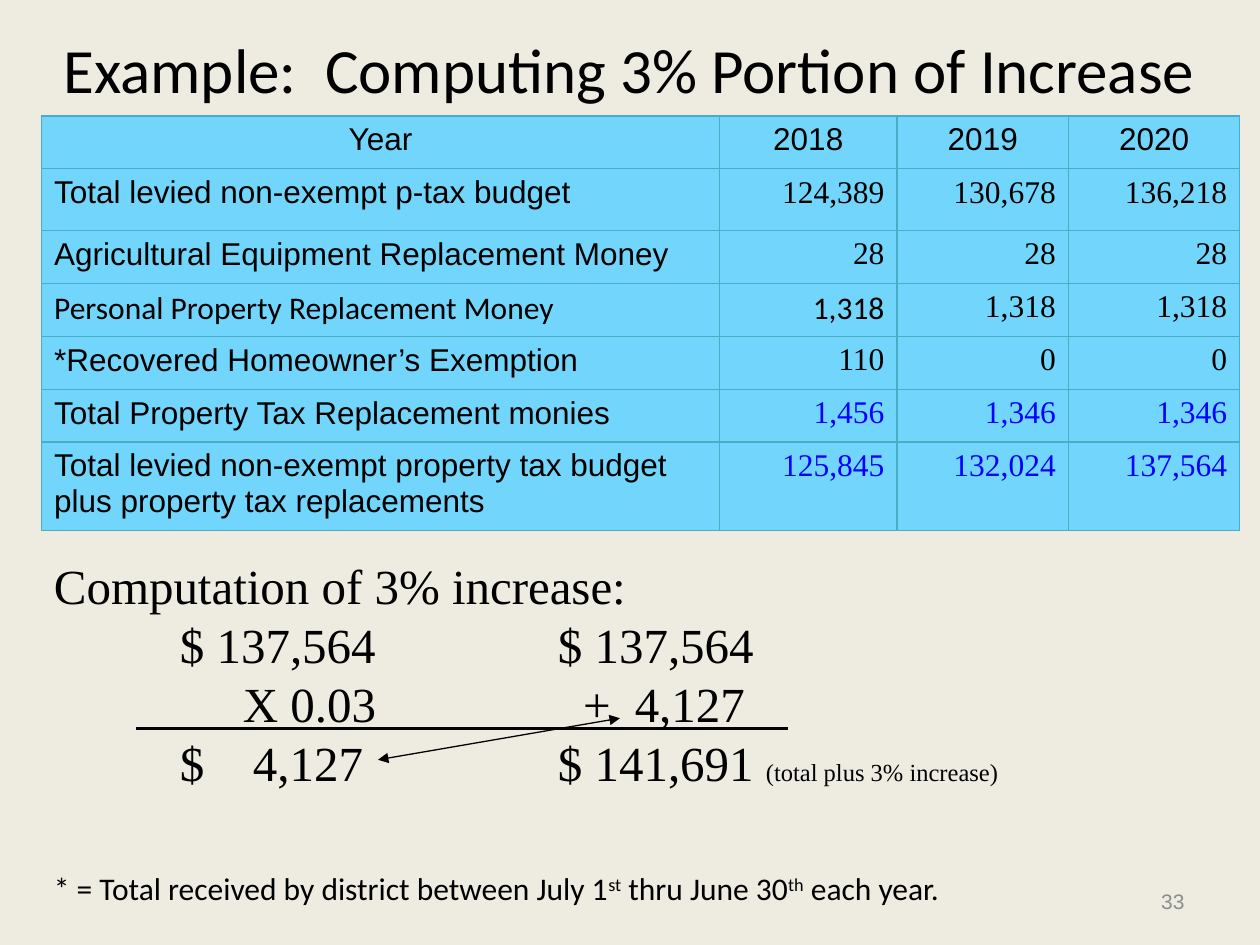
from lxml import etree
from pptx import Presentation
from pptx.dml.color import RGBColor
from pptx.enum import shapes, text
from pptx.oxml import ns
from pptx.util import Inches, Pt

COLORS = {"page": "EEECE1", "cell": "72D6FC", "border": "4BACC6",
          "ink": "000000", "total": "0000FF", "number": "8C8C8C"}
SANS, SERIF, BODY = "Arial", "Times New Roman", "Calibri"
LEFT, CENTER, RIGHT = text.PP_ALIGN.LEFT, text.PP_ALIGN.CENTER, text.PP_ALIGN.RIGHT
MARGIN = 0.33
COLUMNS = [5.38, 1.41, 1.36, 1.36]
ROWS = [0.42, 0.49, 0.42, 0.42, 0.42, 0.42, 0.7]
BUDGET = [
    ("Year", "2018", "2019", "2020"),
    ("Total levied non-exempt p-tax budget", "124,389", "130,678", "136,218"),
    ("Agricultural Equipment Replacement Money", "28", "28", "28"),
    ("Personal Property Replacement Money", "1,318", "1,318", "1,318"),
    ("*Recovered Homeowner’s Exemption", "110", "0", "0"),
    ("Total Property Tax Replacement monies", "1,456", "1,346", "1,346"),
    ("Total levied non-exempt property tax budget plus property tax replacements",
     "125,845", "132,024", "137,564"),
]
PERSONAL_ROW, FIRST_TOTAL_ROW = 3, 5
COMPUTATION = [
    ("Computation of 3% increase:", []),
    ("\t$ 137,564\t$ 137,564", [1, 4]),
    ("\tX 0.03\t+\t4,127", [1.5, 4.2, 4.61]),
    ("\t$\t4,127\t$ 141,691 ", [1, 1.58, 4]),
]


def color(name):
    return RGBColor.from_string(COLORS[name])


def add_element(parent, tag, **attributes):
    return etree.SubElement(parent, ns.qn(tag), attributes)


def add_span(para, words, size, font, ink="ink", baseline=None):
    span = para.add_run()
    span.text = words
    span.font.size = Pt(size)
    span.font.name = font
    span.font.color.rgb = color(ink)
    if baseline:
        span.font._element.set("baseline", str(baseline))


def add_box(page, left, top, width, height, anchor=text.MSO_ANCHOR.TOP):
    box = page.shapes.add_textbox(*map(Inches, (left, top, width, height)))
    frame = box.text_frame
    frame.word_wrap = True
    frame.vertical_anchor = anchor
    return frame


def add_line(page, start, end, width, arrows=False):
    line = page.shapes.add_connector(
        shapes.MSO_CONNECTOR.STRAIGHT, *map(Inches, start + end))
    line.line.color.rgb = color("ink")
    line.line.width = Pt(width)
    if arrows:
        stroke = line.line._get_or_add_ln()
        for tag in ("a:headEnd", "a:tailEnd"):
            add_element(stroke, tag, type="triangle")
    add_element(line._element.spPr, "a:effectLst")


def set_borders(cell):
    properties = cell._tc.get_or_add_tcPr()
    for place, side in enumerate("LRTB"):
        border = add_element(properties, f"a:ln{side}", w=str(Pt(0.79)))
        fill = add_element(border, "a:solidFill")
        add_element(fill, "a:srgbClr", val=COLORS["border"])
        properties.insert(place, border)


def cell_style(row, column):
    if row == 0:
        return CENTER, SANS, "ink"
    if column == 0:
        return LEFT, BODY if row == PERSONAL_ROW else SANS, "ink"
    font = BODY if (row, column) == (PERSONAL_ROW, 1) else SERIF
    return RIGHT, font, "total" if row >= FIRST_TOTAL_ROW else "ink"


def add_budget(page):
    table = page.shapes.add_table(
        len(ROWS), len(COLUMNS), Inches(MARGIN), Inches(0.92),
        Inches(sum(COLUMNS)), Inches(sum(ROWS))).table
    for column, width in zip(table.columns, COLUMNS):
        column.width = Inches(width)
    for row, height in zip(table.rows, ROWS):
        row.height = Inches(height)
    for r, entries in enumerate(BUDGET):
        for c, words in enumerate(entries):
            cell = table.cell(r, c)
            cell.fill.solid()
            cell.fill.fore_color.rgb = color("cell")
            set_borders(cell)
            align, font, ink = cell_style(r, c)
            para = cell.text_frame.paragraphs[0]
            para.alignment = align
            add_span(para, words, 18, font, ink)


def add_computation(page):
    frame = add_box(page, MARGIN, 4.36, 9.5, 2.2)
    for index, (words, stops) in enumerate(COMPUTATION):
        para = frame.add_paragraph() if index else frame.paragraphs[0]
        if stops:
            tabs = add_element(para._p.get_or_add_pPr(), "a:tabLst")
            for stop in stops:
                add_element(tabs, "a:tab", pos=str(Inches(stop)), algn="l")
        add_span(para, words, 28, SERIF)
    add_span(para, "(total plus 3% increase)", 14, SERIF)


def add_footnote(page):
    para = add_box(page, MARGIN, 6.85, 8.83, 0.4).paragraphs[0]
    for words, baseline in [
            ("* = Total received by district between July 1", None), ("st", 30000),
            (" thru June 30", None), ("th", 30000), (" each year.", None)]:
        add_span(para, words, 18, BODY, baseline=baseline)


def add_label(page, place, words, align, size, font, ink):
    para = add_box(page, *place, anchor=text.MSO_ANCHOR.MIDDLE).paragraphs[0]
    para.alignment = align
    add_span(para, words, size, font, ink)


def main():
    deck = Presentation()
    deck.slide_width, deck.slide_height = Inches(10), Inches(7.5)
    page = deck.slides.add_slide(deck.slide_layouts[6])
    page.background.fill.solid()
    page.background.fill.fore_color.rgb = color("page")
    add_label(page, (0.08, -0.08, 9.83, 1.25),
              "Example:  Computing 3% Portion of Increase", CENTER, 36, BODY, "ink")
    add_computation(page)
    add_budget(page)
    add_line(page, (1.08, 5.78), (6.25, 5.78), 2)
    add_line(page, (3, 6.03), (4.92, 5.7), 0.75, arrows=True)
    add_footnote(page)
    add_label(page, (7.17, 6.95, 2.33, 0.4), "33", RIGHT, 12, SANS, "number")
    deck.save("out.pptx")


if __name__ == "__main__":
    main()
